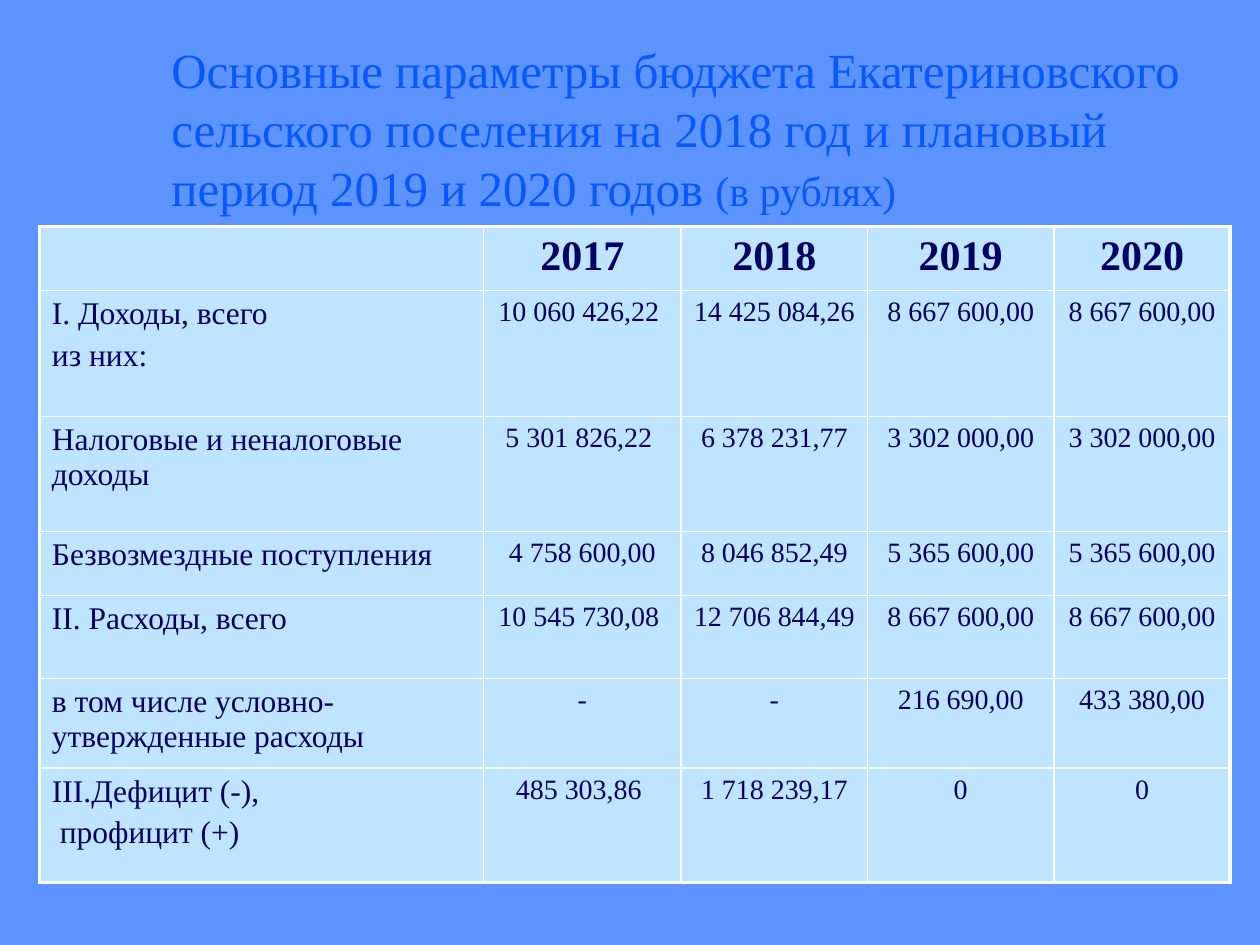
from lxml import etree
from pptx import Presentation
from pptx.dml.color import RGBColor
from pptx.enum import text
from pptx.oxml.ns import qn
from pptx.util import Pt

FONT = "Times New Roman"
WHITE, CELL_FILL, NAVY, TITLE_BLUE = "FFFFFF", "BFE4FF", "000066", "0659FF"


def add_text(para, words, size, color=NAVY, bold=False):
    span = para.add_run()
    span.text = words
    span.font.name = FONT
    span.font.size = Pt(size)
    span.font.bold = bold
    span.font.color.rgb = RGBColor.from_string(color)


def set_border(cell, side, width):
    line = etree.Element(qn("a:" + side), w=str(Pt(width)))
    fill = etree.SubElement(line, qn("a:solidFill"))
    etree.SubElement(fill, qn("a:srgbClr"), val=WHITE)
    cell._tc.get_or_add_tcPr().append(line)


deck = Presentation()
deck.slide_width, deck.slide_height = Pt(720), Pt(540)
page = deck.slides.add_slide(deck.slide_layouts[5])
page.background.fill.solid()
page.background.fill.fore_color.rgb = RGBColor.from_string("5D93FF")

# Title, ending above the table
title = page.shapes.title
title.left, title.top, title.width, title.height = Pt(90.75), Pt(16.5), Pt(613.5), Pt(113)
title.text_frame.word_wrap = True
title.text_frame.auto_size = text.MSO_AUTO_SIZE.NONE
title.text_frame.vertical_anchor = text.MSO_ANCHOR.MIDDLE
para = title.text_frame.paragraphs[0]
para.alignment = text.PP_ALIGN.LEFT
add_text(para, "Основные параметры бюджета Екатериновского сельского поселения "
               "на 2018 год и плановый период 2019 и 2020 годов ", 28, TITLE_BLUE)
add_text(para, "(в рублях)", 24, TITLE_BLUE)

# Budget table
rows = [
    ("", "2017", "2018", "2019", "2020"),
    ("I. Доходы, всего\nиз них:", "10 060 426,22 ", "14 425 084,26", "8 667 600,00", "8 667 600,00"),
    ("Налоговые и неналоговые доходы", "5 301 826,22 ", "6 378 231,77", "3 302 000,00", "3 302 000,00"),
    ("Безвозмездные поступления", "4 758 600,00", "8 046 852,49", "5 365 600,00", "5 365 600,00"),
    ("II. Расходы, всего", "10 545 730,08 ", "12 706 844,49", "8 667 600,00", "8 667 600,00"),
    ("в том числе условно-утвержденные расходы", "-", "-", "216 690,00", "433 380,00"),
    ("III.Дефицит (-),\n профицит (+)", "485 303,86 ", "1 718 239,17", "0", "0"),
]
widths = [253.75, 113, 106.5, 106.5, 100.75]
heights = [36.5, 72, 65.75, 36.5, 47.5, 51.25, 65.5]
last_row, last_column = len(rows) - 1, len(widths) - 1
table = page.shapes.add_table(len(rows), len(widths), Pt(22.5), Pt(129.5),
                              Pt(sum(widths)), Pt(sum(heights))).table
for column, width in zip(table.columns, widths):
    column.width = Pt(width)
for row, height in zip(table.rows, heights):
    row.height = Pt(height)

for r, values in enumerate(rows):
    for c, value in enumerate(values):
        cell = table.cell(r, c)
        # Thick outer frame, thin inner lines; the fill follows the borders
        outer = {"lnL": c == 0, "lnR": c == last_column, "lnT": r == 0, "lnB": r == last_row}
        for side, is_outer in outer.items():
            set_border(cell, side, 2.25 if is_outer else 1)
        cell.fill.solid()
        cell.fill.fore_color.rgb = RGBColor.from_string(CELL_FILL)

        size = 24 if r == 0 else 18 if c == 0 else 16
        for i, words in enumerate(value.split("\n")):
            para = cell.text_frame.paragraphs[0] if i == 0 else cell.text_frame.add_paragraph()
            para.alignment = text.PP_ALIGN.CENTER if c else text.PP_ALIGN.LEFT
            if i:
                para.space_before = Pt(3.6)
            if words:
                add_text(para, words, size, bold=r == 0)

deck.save("out.pptx")
